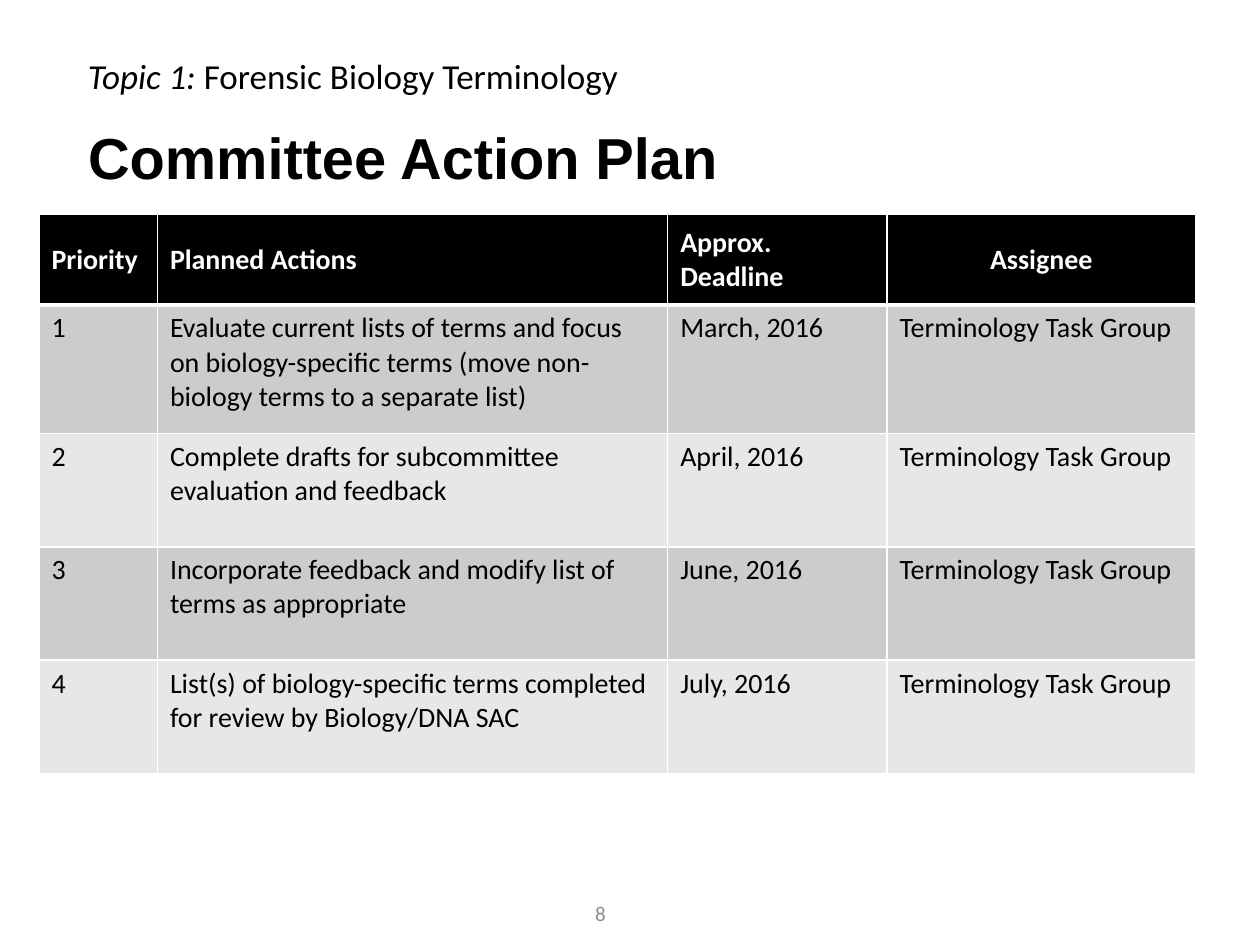
from dataclasses import dataclass

from lxml import etree
from pptx import Presentation
from pptx.dml.color import RGBColor
from pptx.enum.text import MSO_ANCHOR, PP_ALIGN
from pptx.oxml.ns import qn
from pptx.slide import Slide
from pptx.table import _Cell
from pptx.util import Inches, Pt

BLACK = RGBColor(0x00, 0x00, 0x00)
WHITE = RGBColor(0xFF, 0xFF, 0xFF)
GREY = RGBColor(0x8C, 0x8C, 0x8C)
DARK_BAND = RGBColor(0xCC, 0xCC, 0xCC)
LIGHT_BAND = RGBColor(0xE7, 0xE7, 0xE7)

TOP, MIDDLE = MSO_ANCHOR.TOP, MSO_ANCHOR.MIDDLE
LEFT, CENTER = PP_ALIGN.LEFT, PP_ALIGN.CENTER

PAGE_WIDTH, PAGE_HEIGHT = Inches(10), Inches(7.5)
TABLE_LEFT, TABLE_TOP = Inches(0.31), Inches(1.7)
COLUMN_WIDTHS = [Inches(width) for width in (0.94, 4.05, 1.74, 2.45)]
ROW_HEIGHTS = [Inches(height) for height in (0.72, 1.02, 0.9, 0.9, 0.9)]
THIN, THICK = Pt(1), Pt(3)

HEADINGS = ("Priority", "Planned Actions", "Approx. Deadline", "Assignee")
ASSIGNEE = "Terminology Task Group"


@dataclass(frozen=True)
class Action:
    plan: str
    deadline: str


@dataclass(frozen=True)
class Span:
    text: str
    italic: bool = False


@dataclass(frozen=True)
class TextLine:
    """One line of text in a box given in inches."""
    spans: tuple[Span, ...]
    left: float
    top: float
    width: float
    height: float
    size: int
    font: str = "Calibri"
    color: RGBColor = BLACK
    bold: bool = False
    anchor: MSO_ANCHOR = MIDDLE
    align: PP_ALIGN = LEFT
    line_spacing: float = 1.0


ACTIONS = (
    Action("Evaluate current lists of terms and focus on biology-specific terms "
           "(move non-biology terms to a separate list)", "March, 2016"),
    Action("Complete drafts for subcommittee evaluation and feedback", "April, 2016"),
    Action("Incorporate feedback and modify list of terms as appropriate", "June, 2016"),
    Action("List(s) of biology-specific terms completed for review by Biology/DNA SAC",
           "July, 2016"),
)

TEXT_LINES = (
    TextLine((Span("Committee Action Plan"),), 0.6, 0.55, 8.62, 1.45, 33,
             font="Arial", bold=True, line_spacing=0.9),
    TextLine((Span("Topic 1: ", italic=True), Span("Forensic Biology Terminology")),
             0.6, 0.38, 7.36, 0.44, 20, anchor=TOP),
    TextLine((Span("8"),), 3.64, 7.05, 2.25, 0.4, 12, color=GREY, align=CENTER),
)


def add_text_line(page: Slide, line: TextLine) -> None:
    box = page.shapes.add_textbox(Inches(line.left), Inches(line.top),
                                  Inches(line.width), Inches(line.height))
    frame = box.text_frame
    frame.word_wrap = True
    frame.vertical_anchor = line.anchor
    para = frame.paragraphs[0]
    para.alignment = line.align
    para.line_spacing = line.line_spacing
    para.font.name = line.font
    para.font.size = Pt(line.size)
    para.font.bold = line.bold
    para.font.color.rgb = line.color
    for span in line.spans:
        run = para.add_run()
        run.text = span.text
        run.font.italic = span.italic


def set_borders(cell: _Cell, top: int, bottom: int) -> None:
    """Draw white borders; call before filling, as the fill follows them in the XML."""
    properties = cell._tc.get_or_add_tcPr()
    for side, width in (("L", THIN), ("R", THIN), ("T", top), ("B", bottom)):
        border = etree.SubElement(properties, qn(f"a:ln{side}"), w=str(int(width)))
        fill = etree.SubElement(border, qn("a:solidFill"))
        etree.SubElement(fill, qn("a:srgbClr"), val=str(WHITE))


def fill_cell(cell: _Cell, text: str, row: int, column: int) -> None:
    is_header = row == 0
    set_borders(cell, THICK if row == 1 else THIN, THICK if is_header else THIN)
    cell.fill.solid()
    band = DARK_BAND if row % 2 else LIGHT_BAND
    cell.fill.fore_color.rgb = BLACK if is_header else band
    cell.vertical_anchor = MIDDLE if is_header else TOP
    cell.text = text
    para = cell.text_frame.paragraphs[0]
    is_centered = is_header and column == len(HEADINGS) - 1
    para.alignment = CENTER if is_centered else LEFT
    para.font.name = "Calibri"
    para.font.size = Pt(16)
    para.font.bold = is_header
    para.font.color.rgb = WHITE if is_header else BLACK


def add_action_table(page: Slide) -> None:
    rows = [HEADINGS] + [(str(priority), action.plan, action.deadline, ASSIGNEE)
                         for priority, action in enumerate(ACTIONS, start=1)]
    table = page.shapes.add_table(len(rows), len(HEADINGS), TABLE_LEFT, TABLE_TOP,
                                  sum(COLUMN_WIDTHS), sum(ROW_HEIGHTS)).table
    for column, width in zip(table.columns, COLUMN_WIDTHS):
        column.width = width
    for row, height in zip(table.rows, ROW_HEIGHTS):
        row.height = height
    for row_index, texts in enumerate(rows):
        for column_index, text in enumerate(texts):
            fill_cell(table.cell(row_index, column_index), text, row_index, column_index)


def main() -> None:
    deck = Presentation()
    deck.slide_width, deck.slide_height = PAGE_WIDTH, PAGE_HEIGHT
    page = deck.slides.add_slide(deck.slide_layouts[6])
    title, *other_lines = TEXT_LINES
    add_text_line(page, title)
    add_action_table(page)
    for line in other_lines:
        add_text_line(page, line)
    deck.save("out.pptx")


if __name__ == "__main__":
    main()
